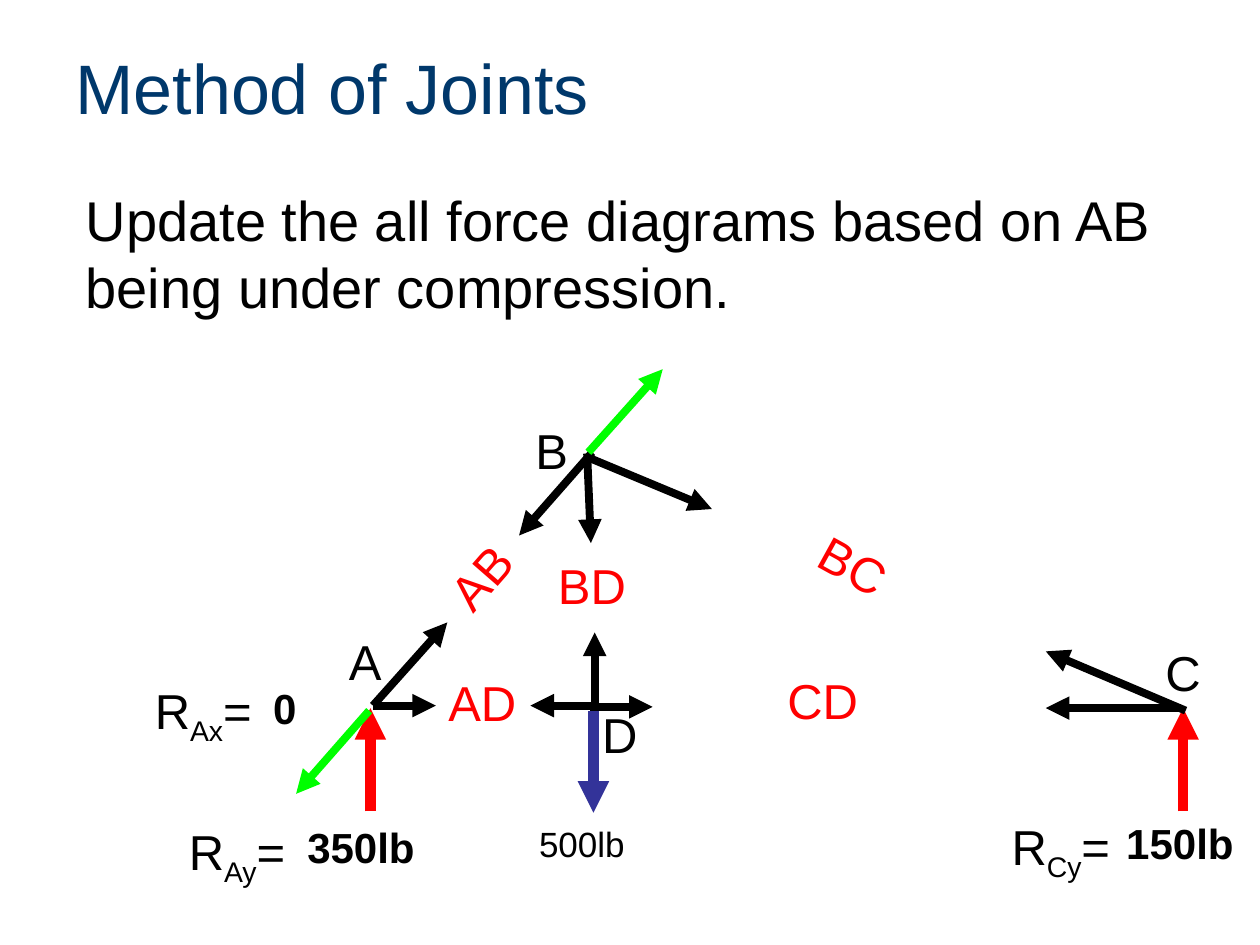
"""Build the Method of Joints slide with its joint force diagrams."""
from pptx import Presentation, util as u
from pptx.dml.color import RGBColor
from pptx.enum import shapes, text
from pptx.oxml.ns import qn
from lxml import etree

BLACK, RED, GREEN, BLUE, NAVY = "000000", "FF0000", "00FF00", "333399", "00386B"


def color(value):
    """Return the colour for a hex string."""
    return RGBColor.from_string(value)


class ForceSlide:
    """Hold the style and the current slide."""

    font_name = "Arial"
    frame_format = {
        "word_wrap": True,
        "auto_size": text.MSO_AUTO_SIZE.NONE,
        "margin_left": u.Inches(0.1),
        "margin_right": u.Inches(0.1),
        "margin_top": u.Inches(0.05),
        "margin_bottom": u.Inches(0.05),
    }
    paragraph_format = {"alignment": text.PP_ALIGN.LEFT, "space_before": u.Pt(0)}

    def __init__(self, presentation):
        """Add a slide with a title and a body."""
        self.slide = presentation.slides.add_slide(presentation.slide_layouts[1])

    def apply(self, target, formats):
        """Set each attribute in the dict."""
        for name, value in formats.items():
            setattr(target, name, value)

    def fill_text(self, shape, words, size, hue=BLACK, bold=False, subscript="", end="",
                  anchor=text.MSO_ANCHOR.TOP):
        """Fill in one styled paragraph with an optional subscript."""
        frame = shape.text_frame
        self.apply(frame, {**self.frame_format, "vertical_anchor": anchor})
        paragraph = frame.paragraphs[0]
        self.apply(paragraph, self.paragraph_format)
        for part in filter(None, (words, subscript, end)):
            run = paragraph.add_run()
            run.text = part
            self.apply(run.font, {"name": self.font_name, "size": u.Pt(size), "bold": bold})
            run.font.color.rgb = color(hue)
            if part == subscript:
                run.font._element.set("baseline", "-25000")
        return paragraph

    def place(self, shape, left, top, width, height):
        """Move and size a shape in inches."""
        names = ("left", "top", "width", "height")
        lengths = map(u.Inches, (left, top, width, height))
        self.apply(shape, dict(zip(names, lengths)))

    def title(self, words, box):
        """Fill the title placeholder."""
        shape = self.slide.shapes.title
        self.place(shape, *box)
        self.fill_text(shape, words, 40, NAVY, anchor=text.MSO_ANCHOR.MIDDLE)

    def body(self, words, box):
        """Fill the body placeholder without a bullet."""
        shape = self.slide.placeholders[1]
        self.place(shape, *box)
        properties = self.fill_text(shape, words, 32)._p.get_or_add_pPr()
        properties.set("marL", "0")
        properties.set("indent", "0")
        etree.SubElement(properties, qn("a:buNone"))

    def label(self, words, left, top, width, height=0.57, size=28, rotation=0, **style):
        """Add a text box."""
        shape = self.slide.shapes.add_textbox(*map(u.Inches, (left, top, width, height)))
        shape.rotation = rotation
        self.fill_text(shape, words, size, **style)

    def arrow(self, start, tip, hue=BLACK, width=4.5):
        """Add a force arrow that points at the tip."""
        ends = map(u.Inches, (*start, *tip))
        connector = self.slide.shapes.add_connector(shapes.MSO_CONNECTOR.STRAIGHT, *ends)
        connector.line.color.rgb = color(hue)
        connector.line.width = u.Pt(width)
        etree.SubElement(connector.line._get_or_add_ln(), qn("a:tailEnd"), type="triangle")
        etree.SubElement(connector._element.spPr, qn("a:effectLst"))


def main():
    """Build and save the slide."""
    presentation = Presentation()
    presentation.slide_width, presentation.slide_height = u.Inches(10), u.Inches(7.5)
    forces = ForceSlide(presentation)
    forces.title("Method of Joints", (0.5, 0.3, 9, 0.78))
    forces.body("Update the all force diagrams based on AB being under compression.",
                (0.58, 1.42, 9.56, 1.17))

    for words, left, top, width in (
        ("0", 2.07, 5.37, 0.55), ("150lb", 8.84, 6.44, 1.16), ("350lb", 2.34, 6.47, 1.51),
    ):
        forces.label(words, left, top, width, 0.5, 24, bold=True)

    forces.arrow((4.71, 5.64), (4.71, 6.45), BLUE, 6)
    for x in (2.94, 9.39):
        forces.arrow((x, 6.44), (x, 5.62), RED, 6)

    for start, tip in (
        ((2.96, 5.6), (3.55, 4.94)),
        ((2.96, 5.6), (3.46, 5.6)),
        ((4.71, 5.6), (4.21, 5.6)),
        ((4.68, 5.61), (5.18, 5.61)),
        ((9.37, 5.62), (8.3, 5.62)),
        ((4.72, 5.63), (4.72, 5.02)),
        ((4.7, 3.59), (4.12, 4.25)),
        ((4.66, 3.6), (4.69, 4.31)),
        ((4.69, 3.64), (5.65, 4.04)),
        ((9.41, 5.64), (8.3, 5.17)),
    ):
        forces.arrow(start, tip)

    for joint, left, top in (
        ("C", 9.15, 5.05), ("A", 2.67, 4.96), ("D", 4.68, 5.54), ("B", 4.15, 3.29),
    ):
        forces.label(joint, left, top, 0.42)

    for reaction, left, top, width in (
        ("Ay", 1.4, 6.47, 1.29), ("Cy", 7.93, 6.43, 1.47), ("Ax", 1.13, 5.35, 1.21),
    ):
        forces.label("R", left, top, width, subscript=reaction, end="=")

    forces.label("500lb", 4.18, 6.48, 1.07, 0.43, 20)

    for member, left, top, width, rotation in (
        ("AB", 3.41, 4.19, 0.99, 311.1),
        ("BC", 6.39, 4.26, 0.99, 28.9),
        ("AD", 3.46, 5.29, 1.03, 0),
        ("CD", 6.15, 5.27, 1.03, 0),
        ("BD", 4.33, 4.36, 1.03, 0),
    ):
        forces.label(member, left, top, width, rotation=rotation, hue=RED)

    forces.arrow((2.93, 5.64), (2.35, 6.3), GREEN)
    forces.arrow((4.67, 3.59), (5.26, 2.93), GREEN)
    presentation.save("out.pptx")


if __name__ == "__main__":
    main()
